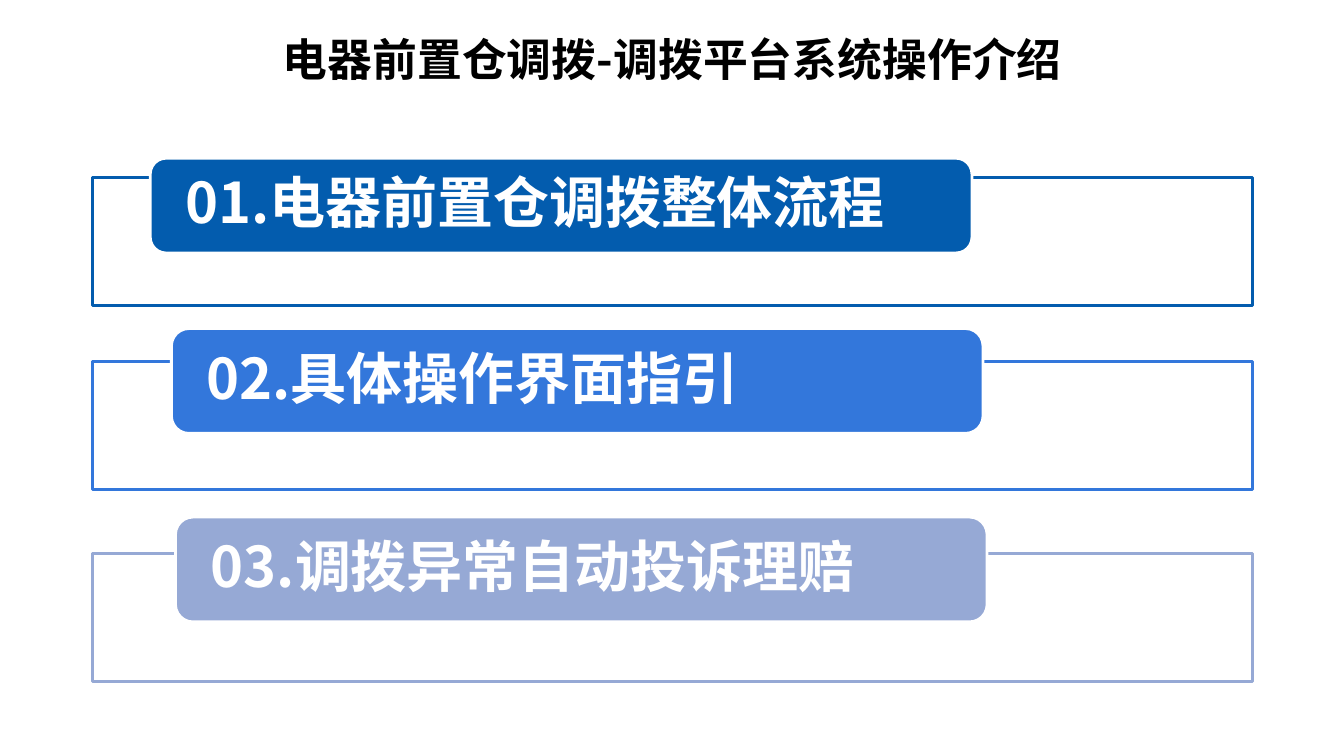
from dataclasses import dataclass

from lxml.etree import SubElement
from pptx import Presentation
from pptx.dml.color import RGBColor
from pptx.enum.shapes import MSO_SHAPE
from pptx.enum.text import MSO_ANCHOR, PP_ALIGN
from pptx.oxml.ns import qn
from pptx.shapes.autoshape import Shape
from pptx.slide import Slide
from pptx.util import Inches, Pt

FONT = "Noto Sans CJK SC"
BLACK = RGBColor(0x00, 0x00, 0x00)
WHITE = RGBColor(0xFF, 0xFF, 0xFF)
DEEP_BLUE = RGBColor(0x03, 0x5C, 0xAE)
BRIGHT_BLUE = RGBColor(0x33, 0x77, 0xDB)
PALE_BLUE = RGBColor(0x96, 0xA9, 0xD5)

MARGIN = 0.92
CONTENT_WIDTH = 11.5
FRAME_HEIGHT = 1.27


@dataclass(frozen=True)
class Chapter:
    heading: str
    color: RGBColor
    frame_top: float
    label_left: float
    label_top: float
    label_width: float
    label_height: float


CHAPTERS = [
    Chapter("01.电器前置仓调拨整体流程", DEEP_BLUE, 1.76, 1.49, 1.57, 8.15, 0.94),
    Chapter("02.具体操作界面指引", BRIGHT_BLUE, 3.59, 1.7, 3.26, 8.05, 1.04),
    Chapter("03.调拨异常自动投诉理赔", PALE_BLUE, 5.49, 1.74, 5.13, 8.05, 1.04),
]


def write_text(shape: Shape, text: str, size: int, color: RGBColor, align: PP_ALIGN) -> None:
    shape.text_frame.word_wrap = True
    paragraph = shape.text_frame.paragraphs[0]
    paragraph.text = text
    paragraph.alignment = align
    paragraph.line_spacing = 0.9
    for run in paragraph.runs:
        run.font.size = Pt(size)
        run.font.bold = True
        run.font.color.rgb = color
        run.font.name = FONT
        SubElement(run.font._element, qn("a:ea"), typeface=FONT)


def add_panel(slide: Slide, kind: MSO_SHAPE, left: float, top: float, width: float,
              height: float, fill: RGBColor, line: RGBColor) -> Shape:
    panel = slide.shapes.add_shape(kind, Inches(left), Inches(top), Inches(width), Inches(height))
    panel.shadow.inherit = False
    panel.fill.solid()
    panel.fill.fore_color.rgb = fill
    panel.line.color.rgb = line
    panel.line.width = Pt(2)
    return panel


def add_chapter(slide: Slide, chapter: Chapter) -> None:
    frame = add_panel(slide, MSO_SHAPE.RECTANGLE, MARGIN, chapter.frame_top,
                      CONTENT_WIDTH, FRAME_HEIGHT, WHITE, chapter.color)
    frame_color = frame._element.spPr.find(qn("a:solidFill")).find(qn("a:srgbClr"))
    SubElement(frame_color, qn("a:alpha"), val="90000")

    label = add_panel(slide, MSO_SHAPE.ROUNDED_RECTANGLE, chapter.label_left, chapter.label_top,
                      chapter.label_width, chapter.label_height, chapter.color, WHITE)
    label.text_frame.margin_left = label.text_frame.margin_right = Inches(0.3)
    label.text_frame.margin_top = label.text_frame.margin_bottom = 0
    label.text_frame.vertical_anchor = MSO_ANCHOR.MIDDLE
    write_text(label, chapter.heading, 40, WHITE, PP_ALIGN.LEFT)


def main() -> None:
    presentation = Presentation()
    presentation.slide_width = Inches(13.33)
    presentation.slide_height = Inches(7.5)
    slide = presentation.slides.add_slide(presentation.slide_layouts[6])

    title = slide.shapes.add_textbox(Inches(MARGIN), Inches(0.33), Inches(CONTENT_WIDTH), Inches(0.92))
    write_text(title, "电器前置仓调拨-调拨平台系统操作介绍", 32, BLACK, PP_ALIGN.CENTER)

    for chapter in CHAPTERS:
        add_chapter(slide, chapter)

    presentation.save("out.pptx")


if __name__ == "__main__":
    main()
